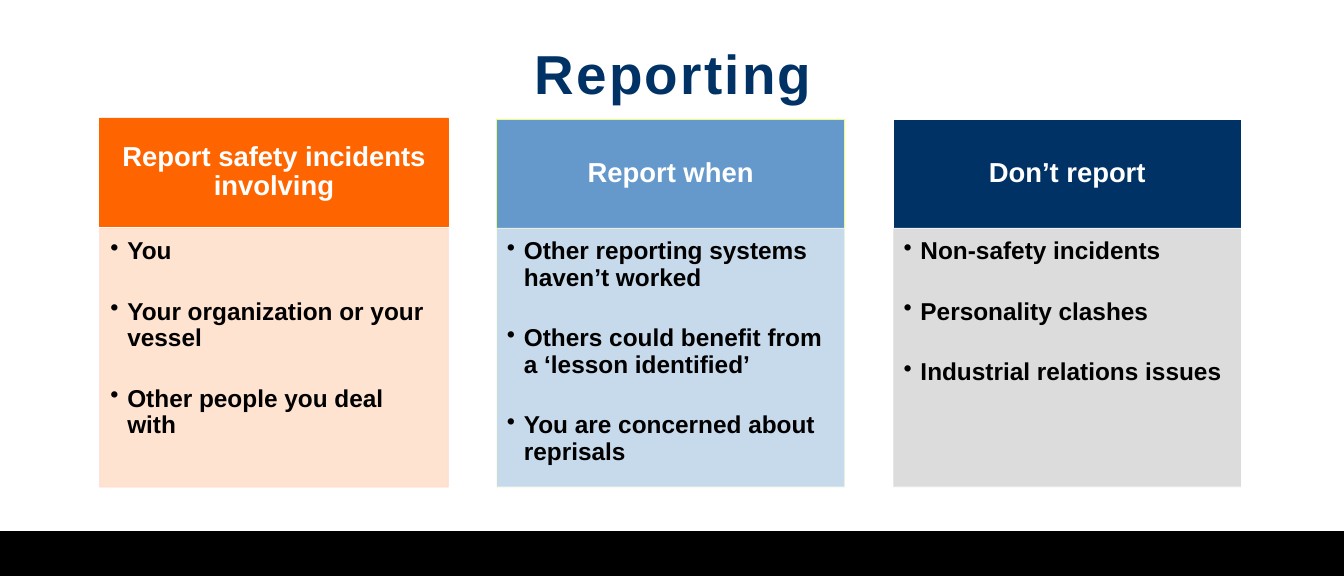
import pptx
import pptx.util
import pptx.dml.color
import pptx.enum.shapes
import pptx.enum.text
import pptx.oxml.ns
from lxml import etree

Inches = pptx.util.Inches
Pt = pptx.util.Pt
RGBColor = pptx.dml.color.RGBColor
PP_ALIGN = pptx.enum.text.PP_ALIGN
MSO_ANCHOR = pptx.enum.text.MSO_ANCHOR
qn = pptx.oxml.ns.qn

NAVY = RGBColor(0x00, 0x32, 0x65)
ORANGE = RGBColor(0xFE, 0x65, 0x01)
BLUE = RGBColor(0x65, 0x99, 0xCB)
LIME = RGBColor(0xE6, 0xFF, 0x7F)
PEACH = RGBColor(0xFF, 0xE0, 0xCC)
PINK = RGBColor(0xFF, 0xD3, 0xCC)
PALE_BLUE = RGBColor(0xC1, 0xD6, 0xEA)
CREAM = RGBColor(0xFD, 0xFF, 0xE6)
GREY = RGBColor(0xD9, 0xD9, 0xD9)
WHITE = RGBColor(0xFF, 0xFF, 0xFF)
BLACK = RGBColor(0x00, 0x00, 0x00)

SLIDE_WIDTH, SLIDE_HEIGHT = 24.5, 10.5
COLUMN_LEFT, COLUMN_STEP, COLUMN_WIDTH = 1.82, 7.23, 6.35
HEADING_HEIGHT = 1.98
PANEL_TOP, PANEL_HEIGHT = 4.16, 4.72

# Heading top, heading fill and line, panel fill and line, heading, items
COLUMNS = [
    (2.15, ORANGE, ORANGE, PEACH, PINK, "Report safety incidents involving",
     ["You", "Your organization or your vessel", "Other people you deal with"]),
    (2.18, BLUE, LIME, PALE_BLUE, CREAM, "Report when",
     ["Other reporting systems haven’t worked",
      "Others could benefit from a ‘lesson identified’",
      "You are concerned about reprisals"]),
    (2.18, NAVY, WHITE, GREY, WHITE, "Don’t report",
     ["Non-safety incidents", "Personality clashes",
      "Industrial relations issues"]),
]


class SlideBuilder:
    font_name = "Arial"
    line_spacing = 0.9

    def __init__(self, slide):
        self.slide = slide

    def apply(self, target, values):
        for name, value in values.items():
            setattr(target, name, value)

    def frame(self, shape, anchor, margins):
        left, top, right, bottom = (Inches(margin) for margin in margins)
        self.apply(shape.text_frame, {
            "word_wrap": True, "vertical_anchor": anchor,
            "auto_size": pptx.enum.text.MSO_AUTO_SIZE.NONE,
            "margin_left": left, "margin_top": top,
            "margin_right": right, "margin_bottom": bottom})

    def add_text(self, paragraph, text, size, color, align):
        self.apply(paragraph, {
            "alignment": align, "line_spacing": self.line_spacing,
            "space_before": Pt(0)})
        run = paragraph.add_run()
        run.text = text
        self.apply(run.font, {
            "name": self.font_name, "size": Pt(size), "bold": True})
        run.font.color.rgb = color
        return run

    def title(self, text):
        title = self.slide.shapes.title
        self.apply(title, {
            "left": Inches(0.78), "top": Inches(0.67),
            "width": Inches(22.98), "height": Inches(1.44)})
        self.frame(title, MSO_ANCHOR.MIDDLE, (0.1, 0.05, 0.1, 0.05))
        run = self.add_text(title.text_frame.paragraphs[0], text, 72, NAVY,
                            PP_ALIGN.CENTER)
        run._r.get_or_add_rPr().set("spc", "300")

    def box(self, left, top, width, height, fill, line=None, opacity=100):
        box = self.slide.shapes.add_shape(
            pptx.enum.shapes.MSO_SHAPE.RECTANGLE,
            Inches(left), Inches(top), Inches(width), Inches(height))
        box.shadow.inherit = False
        box.fill.solid()
        box.fill.fore_color.rgb = fill
        if line is None:
            box.line.fill.background()
        else:
            box.line.color.rgb = line
            box.line.width = Pt(1)
        if opacity < 100:
            for color in box._element.spPr.iter(qn("a:srgbClr")):
                etree.SubElement(color, qn("a:alpha")).set(
                    "val", str(opacity * 1000))
        return box

    def heading(self, left, top, text, fill, line):
        heading = self.box(left, top, COLUMN_WIDTH, HEADING_HEIGHT, fill, line)
        self.frame(heading, MSO_ANCHOR.MIDDLE, (0.28, 0.16, 0.28, 0.16))
        self.add_text(heading.text_frame.paragraphs[0], text, 36, WHITE,
                      PP_ALIGN.CENTER)

    def bullet_panel(self, left, items, fill, line):
        panel = self.box(left, PANEL_TOP, COLUMN_WIDTH, PANEL_HEIGHT,
                         fill, line, opacity=90)
        self.frame(panel, MSO_ANCHOR.TOP, (0.19, 0.19, 0.25, 0.28))
        for index, item in enumerate(items):
            paragraph = (panel.text_frame.add_paragraph() if index
                         else panel.text_frame.paragraphs[0])
            properties = paragraph._p.get_or_add_pPr()
            properties.set("marL", str(Inches(0.31)))
            properties.set("indent", str(-Inches(0.31)))
            etree.SubElement(properties, qn("a:buChar")).set("char", "•")
            self.add_text(paragraph, item, 32, BLACK, PP_ALIGN.LEFT)
            if index:
                paragraph.space_before = Pt(45)


def main():
    presentation = pptx.Presentation()
    presentation.slide_width = Inches(SLIDE_WIDTH)
    presentation.slide_height = Inches(SLIDE_HEIGHT)
    title_only = presentation.slide_layouts[5]
    builder = SlideBuilder(presentation.slides.add_slide(title_only))

    # Footer band and title
    builder.box(0, 9.68, SLIDE_WIDTH, 0.82, BLACK)
    builder.title("Reporting")

    # Three columns, each a heading over a bulleted panel
    for index, column in enumerate(COLUMNS):
        top, fill, line, panel_fill, panel_line, heading, items = column
        left = COLUMN_LEFT + index * COLUMN_STEP
        builder.heading(left, top, heading, fill, line)
        builder.bullet_panel(left, items, panel_fill, panel_line)

    presentation.save("out.pptx")


if __name__ == "__main__":
    main()
